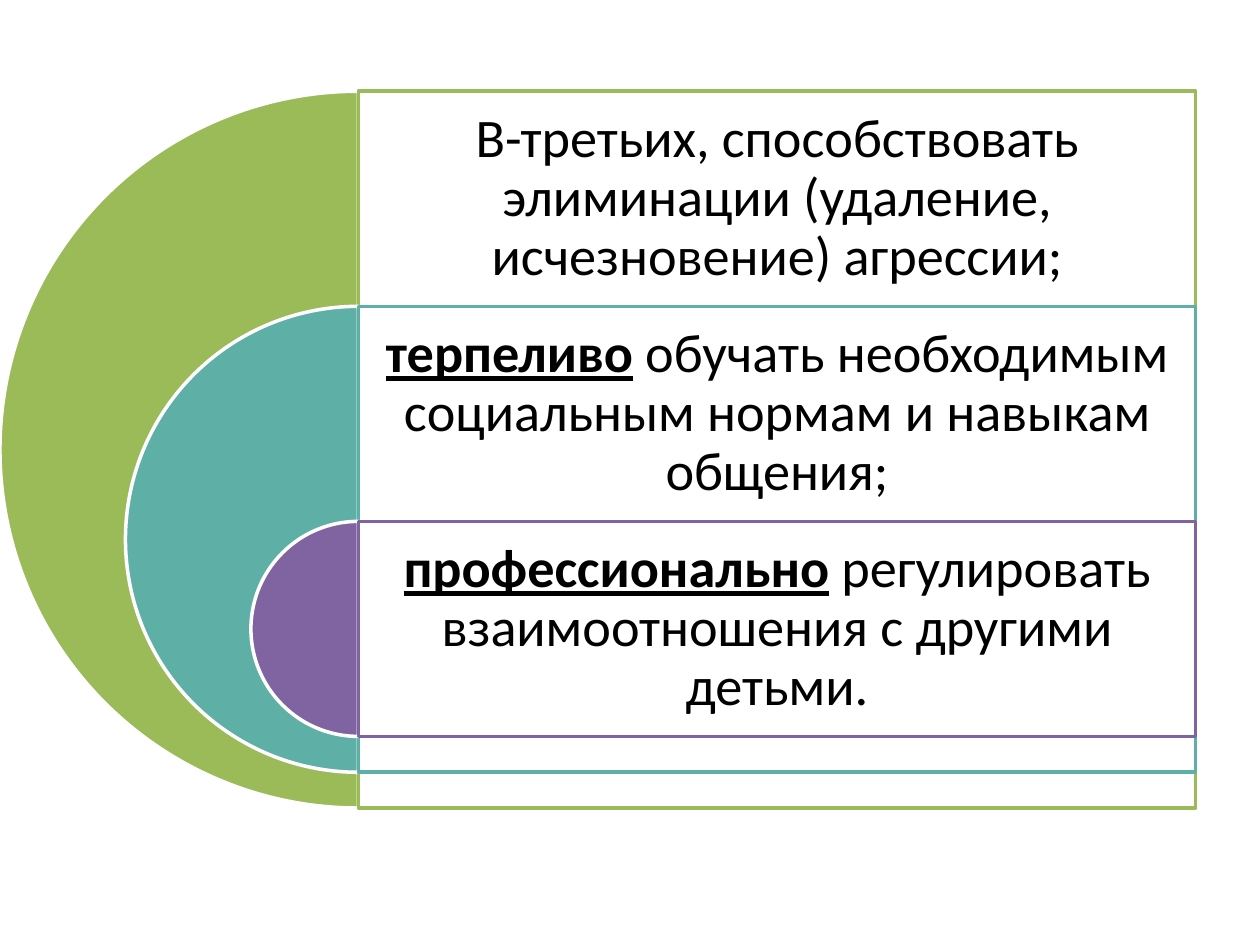
from lxml import etree
from pptx import Presentation
from pptx.dml.color import RGBColor
from pptx.enum.shapes import MSO_SHAPE
from pptx.enum.text import MSO_ANCHOR, PP_ALIGN
from pptx.oxml.ns import qn
from pptx.util import Cm, Pt

WHITE = RGBColor(0xFF, 0xFF, 0xFF)
BLACK = RGBColor(0, 0, 0)
GREEN = RGBColor(0x9B, 0xBB, 0x59)
TEAL = RGBColor(0x5E, 0xAF, 0xA6)
PURPLE = RGBColor(0x80, 0x64, 0xA2)

# Colour, stressed opening word, rest of the text
LAYERS = [
    (GREEN, "", "В-третьих, способствовать элиминации (удаление, исчезновение) агрессии;"),
    (TEAL, "терпеливо", " обучать необходимым социальным нормам и навыкам общения;"),
    (PURPLE, "профессионально", " регулировать взаимоотношения с другими детьми."),
]
ROW = 0.3      # text row height as a share of the largest circle
SHRINK = 0.35  # loss of diameter from one circle to the next


def add_block(slide, kind, box, fill, line):
    block = slide.shapes.add_shape(kind, *box)
    block.shadow.inherit = False
    block.fill.solid()
    block.fill.fore_color.rgb = fill
    block.line.color.rgb = line
    block.line.width = Pt(2)
    return block


def add_half(slide, box, color):
    """Left half of a disc, from 90 to 270 degrees."""
    half = add_block(slide, MSO_SHAPE.PIE, box, color, WHITE)
    half.adjustments[0] = 54
    half.adjustments[1] = 162


def add_panel(slide, box, color):
    panel = add_block(slide, MSO_SHAPE.RECTANGLE, box, WHITE, color)
    tint = panel.fill._xPr.find(qn("a:solidFill"))[0]
    etree.SubElement(tint, qn("a:alpha"), val="90000")


def add_label(slide, box, stress, rest):
    frame = slide.shapes.add_textbox(*box).text_frame
    frame.word_wrap = True
    frame.vertical_anchor = MSO_ANCHOR.MIDDLE
    frame.margin_left = frame.margin_right = Cm(0.33)
    frame.margin_top = frame.margin_bottom = Cm(0.33)
    para = frame.paragraphs[0]
    para.alignment = PP_ALIGN.CENTER
    para.line_spacing = 0.9
    for text, strong in ((stress, True), (rest, False)):
        if not text:
            continue
        run = para.add_run()
        run.text = text
        run.font.name = "Calibri"
        run.font.size = Pt(31)
        run.font.color.rgb = BLACK
        run.font.bold = run.font.underline = strong


def add_target(slide, left, top, width, height):
    """Nested half discs, each with a panel and a label on its right."""
    axis = left + height // 2
    span = left + width - axis
    row = int(height * ROW)
    for i, (color, stress, rest) in enumerate(LAYERS):
        size = int(height * (1 - SHRINK * i))
        y = top + row * i
        add_half(slide, (axis - size // 2, y, size, size), color)
        add_panel(slide, (axis, y, span, size), color)
        add_label(slide, (axis, y, span, row), stress, rest)


def main():
    deck = Presentation()
    deck.slide_width, deck.slide_height = Cm(25.4), Cm(19.05)
    slide = deck.slides.add_slide(deck.slide_layouts[6])
    add_target(slide, Cm(0), Cm(1.84), Cm(24.1), Cm(14.45))
    deck.save("out.pptx")


if __name__ == "__main__":
    main()
